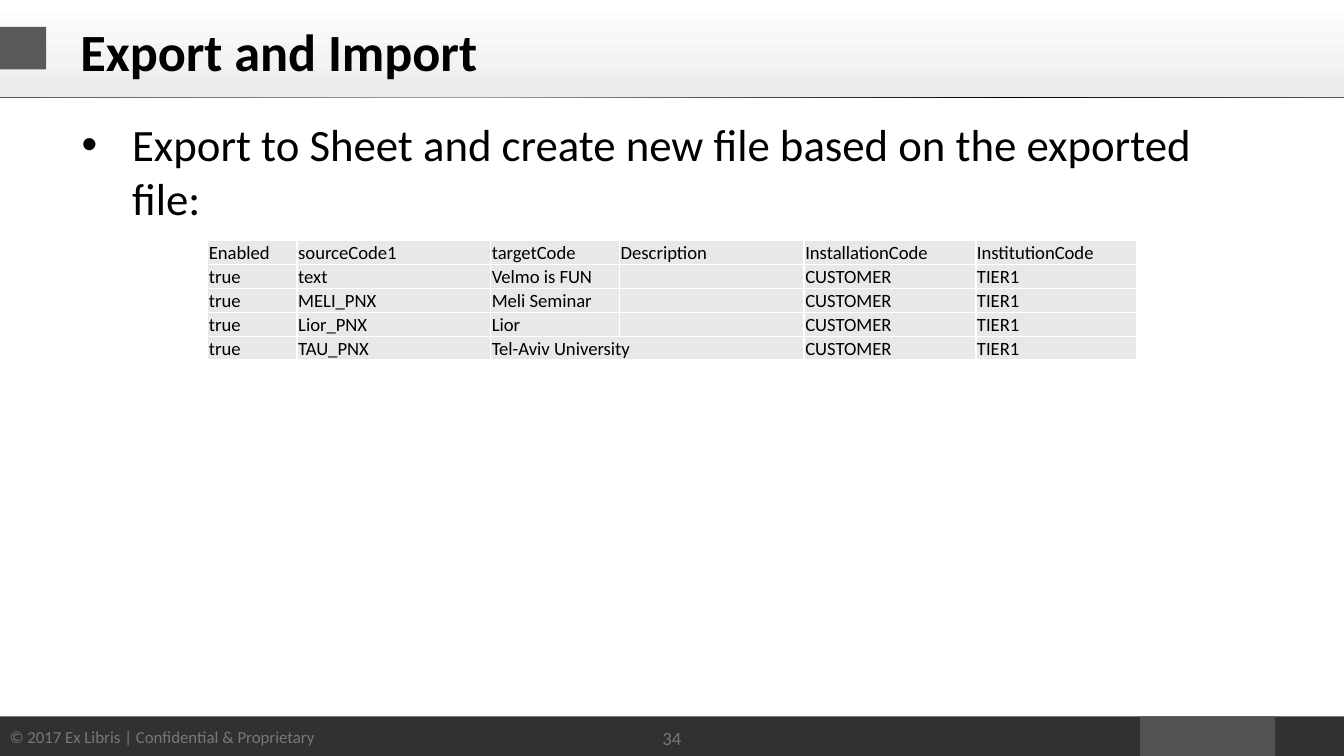
from typing import NamedTuple

from lxml.etree import SubElement
from pptx import Presentation
from pptx.dml.color import RGBColor
from pptx.enum.shapes import MSO_SHAPE
from pptx.enum.text import MSO_ANCHOR, PP_ALIGN
from pptx.oxml.ns import qn
from pptx.util import Pt

FONT = "Calibri"
BLACK = RGBColor(0, 0, 0)
WHITE = RGBColor(0xFF, 0xFF, 0xFF)
DARK = RGBColor(0x31, 0x31, 0x33)
SLATE = RGBColor(0x52, 0x52, 0x54)
GREY = RGBColor(0x59, 0x59, 0x59)
MUTED = RGBColor(0x78, 0x78, 0x78)
PALE = RGBColor(0xE7, 0xE8, 0xEA)
MIST = RGBColor(0xF3, 0xF3, 0xF3)
HAZE = RGBColor(0xEC, 0xEC, 0xEC)
SMOKE = RGBColor(0xA0, 0xA0, 0xA0)

Fade = list[tuple[int, RGBColor]]


class Box(NamedTuple):
    left: float
    top: float
    width: float
    height: float

    def points(self) -> list[Pt]:
        return [Pt(side) for side in self]


class Bar(NamedTuple):
    box: Box
    fill: RGBColor | Fade
    angle: int = 0


class Label(NamedTuple):
    box: Box
    text: str
    size: float
    color: RGBColor = BLACK
    bold: bool = False
    align: PP_ALIGN = PP_ALIGN.LEFT
    anchor: MSO_ANCHOR = MSO_ANCHOR.TOP
    wrap: bool = True
    bullet: bool = False


BARS = [
    Bar(Box(0, 383.75, 720, 21.25), DARK),
    Bar(Box(610.7, 383.75, 72.5, 21.25), SLATE),
    Bar(Box(0, 0, 720, 52),
        [(0, WHITE), (66, MIST), (83, HAZE), (100, HAZE)], 90),
    Bar(Box(0, 14.4, 24.8, 22.8), GREY),
    Bar(Box(0, 51.9, 720, 0.6),
        [(0, GREY), (35, SMOKE), (75, BLACK), (100, GREY)]),
]

LABELS = [
    Label(Box(-2.9, 386, 179.3, 18), "© 2017 Ex Libris | Confidential & Proprietary",
          9, MUTED, align=PP_ALIGN.CENTER, wrap=False),
    Label(Box(338.6, 381.2, 42.7, 28.8), "34", 10, MUTED,
          align=PP_ALIGN.CENTER, anchor=MSO_ANCHOR.MIDDLE),
    Label(Box(36, 4.5, 648, 45), "Export and Import", 28, bold=True,
          anchor=MSO_ANCHOR.MIDDLE),
    Label(Box(36.7, 59.2, 648, 313),
          "Export to Sheet and create new file based on the exported file:",
          24, bullet=True),
]

SPOT = (111.2, 128.8)
WIDTHS = [47.9, 103.7, 69.1, 98.9, 92, 86.4]
ROW = 12.85
HEAD = ["Enabled", "sourceCode1", "targetCode", "Description",
        "InstallationCode", "InstitutionCode"]
CODES = [
    ("text", "Velmo is FUN"),
    ("MELI_PNX", "Meli Seminar"),
    ("Lior_PNX", "Lior"),
    ("TAU_PNX", "Tel-Aviv University"),
]
ROWS = [HEAD] + [["true", code, target, "", "CUSTOMER", "TIER1"]
                 for code, target in CODES]


def add_run(para, text: str, size: float, color: RGBColor, bold: bool = False) -> None:
    run = para.add_run()
    run.text = text
    font = run.font
    font.name, font.size, font.bold = FONT, Pt(size), bold
    font.color.rgb = color


def fade(shape, stops: Fade, angle: int) -> None:
    """Fill a shape with a linear gradient, its angle measured clockwise."""
    shape.fill.gradient()
    shape.fill.gradient_angle = -angle % 360
    chain = shape._element.spPr.find(".//" + qn("a:gsLst"))
    for stop in list(chain):
        chain.remove(stop)
    for place, color in stops:
        stop = SubElement(chain, qn("a:gs"), pos=str(place * 1000))
        SubElement(stop, qn("a:srgbClr"), val=str(color))


def draw_bar(slide, bar: Bar) -> None:
    shape = slide.shapes.add_shape(MSO_SHAPE.RECTANGLE, *bar.box.points())
    shape.shadow.inherit = False
    shape.line.fill.background()
    if isinstance(bar.fill, list):
        fade(shape, bar.fill, bar.angle)
    else:
        shape.fill.solid()
        shape.fill.fore_color.rgb = bar.fill


def add_dot(para) -> None:
    """Give a paragraph a round bullet and a hanging indent."""
    props = para._p.get_or_add_pPr()
    props.set("marL", str(Pt(27)))
    props.set("indent", str(Pt(-27)))
    SubElement(props, qn("a:buFont"), typeface="Arial")
    SubElement(props, qn("a:buChar"), char="•")


def draw_label(slide, label: Label) -> None:
    frame = slide.shapes.add_textbox(*label.box.points()).text_frame
    frame.word_wrap = label.wrap
    frame.vertical_anchor = label.anchor
    para = frame.paragraphs[0]
    if label.bullet:
        add_dot(para)
    para.alignment = label.align
    add_run(para, label.text, label.size, label.color, label.bold)


def edge_cell(cell) -> None:
    """Draw a thin white border on all four sides."""
    props = cell._tc.get_or_add_tcPr()
    for side in ("lnL", "lnR", "lnT", "lnB"):
        line = SubElement(props, qn("a:" + side), w=str(Pt(1)))
        fill = SubElement(line, qn("a:solidFill"))
        SubElement(fill, qn("a:srgbClr"), val=str(WHITE))


def fill_cell(cell, text: str) -> None:
    edge_cell(cell)
    cell.fill.solid()
    cell.fill.fore_color.rgb = PALE
    cell.margin_left = cell.margin_right = cell.margin_top = Pt(0.7)
    cell.margin_bottom = Pt(0)
    cell.vertical_anchor = MSO_ANCHOR.BOTTOM
    para = cell.text_frame.paragraphs[0]
    if text:
        add_run(para, text, 10, BLACK)
    else:
        SubElement(para._p, qn("a:endParaRPr"), sz="1000")


def draw_table(slide) -> None:
    box = Box(*SPOT, sum(WIDTHS), ROW * len(ROWS))
    table = slide.shapes.add_table(len(ROWS), len(WIDTHS), *box.points()).table
    table.first_row = table.horz_banding = False
    for column, width in zip(table.columns, WIDTHS):
        column.width = Pt(width)
    for y, texts in enumerate(ROWS):
        table.rows[y].height = Pt(ROW)
        for x, text in enumerate(texts):
            fill_cell(table.cell(y, x), text)
    last = len(ROWS) - 1
    table.cell(last, 2).merge(table.cell(last, 3))


def main() -> None:
    deck = Presentation()
    deck.slide_width, deck.slide_height = Pt(720), Pt(405)
    slide = deck.slides.add_slide(deck.slide_layouts[6])
    for bar in BARS:
        draw_bar(slide, bar)
    for label in LABELS:
        draw_label(slide, label)
    draw_table(slide)
    deck.save("out.pptx")


if __name__ == "__main__":
    main()
